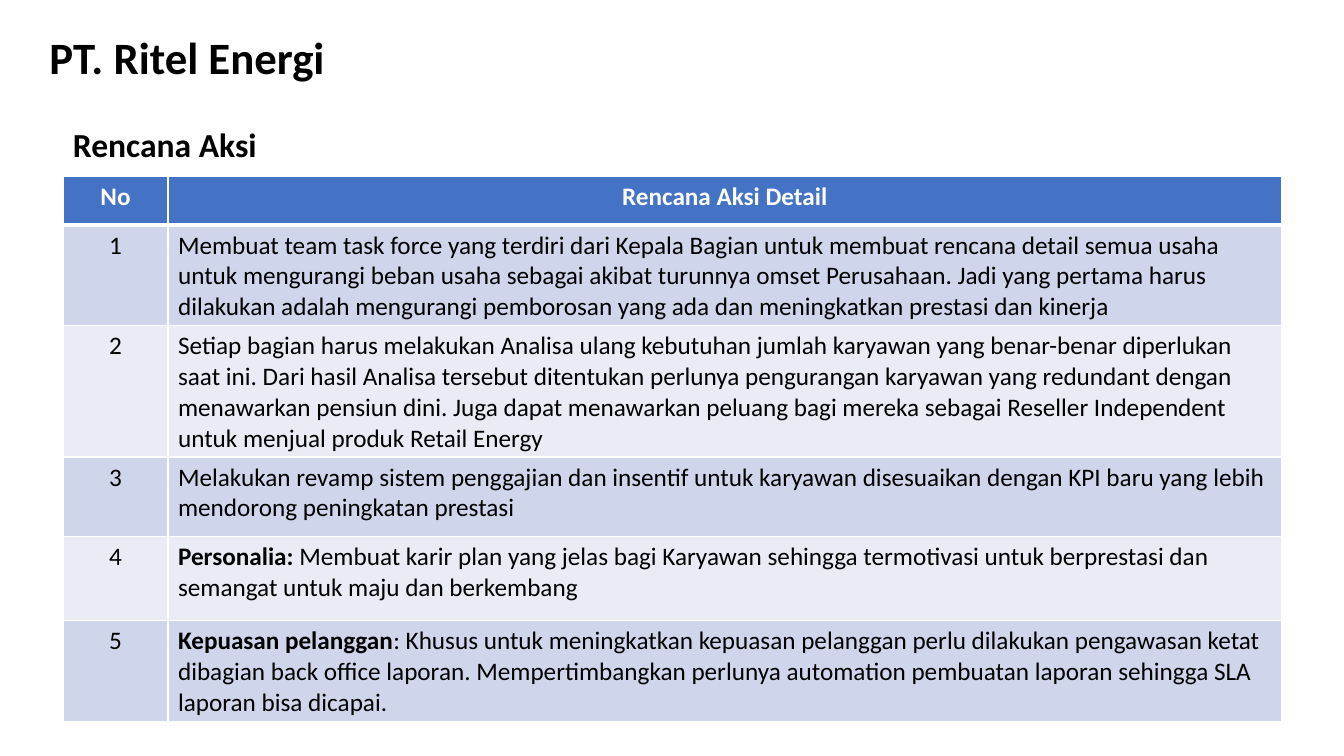
from lxml.etree import SubElement
from pptx import Presentation
from pptx.dml.color import RGBColor
from pptx.enum.text import MSO_ANCHOR as Anchor, MSO_AUTO_SIZE as AutoSize, PP_ALIGN as Align
from pptx.oxml.ns import qn
from pptx.util import Pt

FONT = "Calibri"
BLACK, WHITE, BLUE = "000000", "FFFFFF", "4472C4"
BANDS = ["CFD5EA", "E9EBF5"]
COLUMN_WIDTHS = [75, 795.5]
ROW_HEIGHTS = [34.5, 72, 93.5, 57, 60, 72]

HEADINGS = ["No", "Rencana Aksi Detail"]
# Each action is a bold lead-in, which may be empty, and its detail.
ACTIONS = [
    ("", "Membuat team task force yang terdiri dari Kepala Bagian untuk membuat rencana "
         "detail semua usaha untuk mengurangi beban usaha sebagai akibat turunnya omset "
         "Perusahaan. Jadi yang pertama harus dilakukan adalah mengurangi pemborosan yang "
         "ada dan meningkatkan prestasi dan kinerja"),
    ("", "Setiap bagian harus melakukan Analisa ulang kebutuhan jumlah karyawan yang "
         "benar-benar diperlukan saat ini. Dari hasil Analisa tersebut ditentukan perlunya "
         "pengurangan karyawan yang redundant dengan menawarkan pensiun dini. Juga dapat "
         "menawarkan peluang bagi mereka sebagai Reseller Independent untuk menjual produk "
         "Retail Energy"),
    ("", "Melakukan revamp sistem penggajian dan insentif untuk karyawan disesuaikan dengan "
         "KPI baru yang lebih mendorong peningkatan prestasi"),
    ("Personalia: ", "Membuat karir plan yang jelas bagi Karyawan sehingga termotivasi untuk "
                     "berprestasi dan semangat untuk maju dan berkembang"),
    ("Kepuasan pelanggan", ": Khusus untuk meningkatkan kepuasan pelanggan perlu dilakukan "
                           "pengawasan ketat dibagian back office laporan. Mempertimbangkan "
                           "perlunya automation pembuatan laporan sehingga SLA laporan bisa "
                           "dicapai."),
]


def rgb(code):
    return RGBColor.from_string(code)


def format_span(span, size, color=BLACK, bold=False):
    span.font.name = FONT
    span.font.size = Pt(size)
    span.font.bold = bold
    span.font.color.rgb = rgb(color)


def write_heading(box, text, size):
    """Fill a box with one bold, unwrapped line."""
    frame = box.text_frame
    frame.text = text
    frame.word_wrap = False
    frame.auto_size = AutoSize.SHAPE_TO_FIT_TEXT
    frame.vertical_anchor = Anchor.TOP
    para = frame.paragraphs[0]
    para.alignment = Align.LEFT
    format_span(para.runs[0], size, bold=True)


def add_title(page, text, left, top, width, height):
    title = page.shapes.title
    title.left, title.top, title.width, title.height = map(Pt, (left, top, width, height))
    write_heading(title, text, 32)


def add_subtitle(page, text, left, top, width, height):
    box = page.shapes.add_textbox(*map(Pt, (left, top, width, height)))
    write_heading(box, text, 24)


def set_borders(cell, top, bottom):
    properties = cell._tc.get_or_add_tcPr()
    for side, width in (("L", 1), ("R", 1), ("T", top), ("B", bottom)):
        line = SubElement(properties, qn(f"a:ln{side}"), w=str(Pt(width)))
        SubElement(SubElement(line, qn("a:solidFill")), qn("a:srgbClr"), val=WHITE)


def fill_cell(cell, parts, fill, color, alignment):
    """Write (text, bold) parts into a cell and colour its background."""
    cell.fill.solid()
    cell.fill.fore_color.rgb = rgb(fill)
    para = cell.text_frame.paragraphs[0]
    para.alignment = alignment
    for text, bold in parts:
        if text:
            span = para.add_run()
            span.text = text
            format_span(span, 18, color, bold)


def add_action_table(page, left, top):
    frame = page.shapes.add_table(len(ROW_HEIGHTS), len(COLUMN_WIDTHS), Pt(left), Pt(top),
                                  Pt(sum(COLUMN_WIDTHS)), Pt(sum(ROW_HEIGHTS)))
    table = frame.table
    for column, width in zip(table.columns, COLUMN_WIDTHS):
        column.width = Pt(width)
    for index, height in enumerate(ROW_HEIGHTS):
        table.rows[index].height = Pt(height)
        for cell in table.rows[index].cells:
            set_borders(cell, top=3 if index == 1 else 1, bottom=3 if index == 0 else 1)

    for index, heading in enumerate(HEADINGS):
        fill_cell(table.cell(0, index), [(heading, True)], BLUE, WHITE, Align.CENTER)
    for number, (lead, detail) in enumerate(ACTIONS, start=1):
        band = BANDS[(number - 1) % 2]
        fill_cell(table.cell(number, 0), [(str(number), False)], band, BLACK, Align.CENTER)
        fill_cell(table.cell(number, 1), [(lead, True), (detail, False)], band, BLACK, Align.LEFT)


def main():
    deck = Presentation()
    deck.slide_width, deck.slide_height = Pt(960), Pt(540)
    page = deck.slides.add_slide(deck.slide_layouts.get_by_name("Title Only"))
    add_title(page, "PT. Ritel Energi", 28, 17.5, 213, 46)
    add_action_table(page, 45, 126.25)
    add_subtitle(page, "Rencana Aksi", 45, 85, 147, 36)
    deck.save("out.pptx")


if __name__ == "__main__":
    main()
